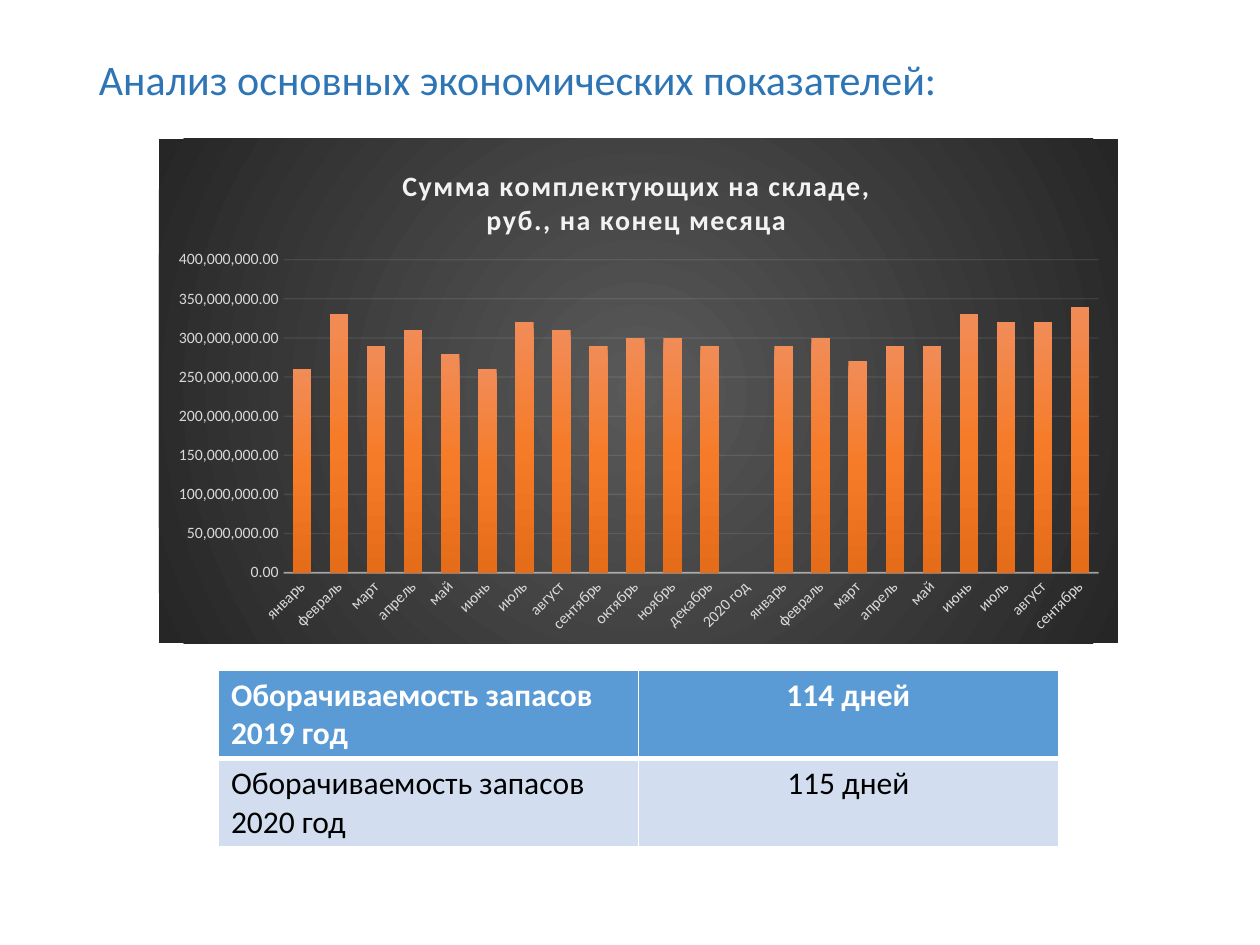
from lxml import etree
from pptx import Presentation
from pptx.chart.data import CategoryChartData
from pptx.dml.color import RGBColor
from pptx.enum import chart as ch, text as tx
from pptx.oxml import ns, parse_xml
from pptx.util import Pt

FONT = "Calibri"
COLORS = {
    "heading": "2E75B6", "header": "5B9BD5", "row": "D2DEEF",
    "white": "FFFFFF", "black": "000000", "label": "D9D9D9", "light": "F2F2F2",
    "back_in": "595959", "back_out": "262626",
    "bar_top": "F18C57", "bar_mid": "F67B28", "bar_base": "E56C19",
}
MONTHS = ["январь", "февраль", "март", "апрель", "май", "июнь", "июль",
          "август", "сентябрь", "октябрь", "ноябрь", "декабрь"]
MILLIONS_2019 = [260, 330, 290, 310, 280, 260, 320, 310, 290, 300, 300, 290]
MILLIONS_2020 = [290, 300, 270, 290, 290, 330, 320, 320, 340]
TURNOVER = [("Оборачиваемость запасов 2019 год", "114 дней"),
            ("Оборачиваемость запасов 2020 год", "115 дней")]


def rgb(name):
    """Return the named colour."""
    return RGBColor.from_string(COLORS[name])


def set_font(font, size, color, bold=False):
    """Format a font."""
    font.name, font.size, font.bold = FONT, Pt(size), bold
    font.color.rgb = rgb(color)


def add_text(p, content, size=18, color="black", bold=False, align=None, spacing=None):
    """Add a formatted run to a paragraph."""
    p.alignment = align
    r = p.add_run()
    r.text = content
    set_font(r.font, size, color, bold)
    if spacing:
        r.font._element.set("spc", str(spacing * 100))


def gradient(stops, shade):
    """Return a gradient fill element from (percent, colour) stops."""
    marks = "".join(f'<a:gs pos="{pos * 1000}"><a:srgbClr val="{COLORS[c]}"/></a:gs>'
                    for pos, c in stops)
    return parse_xml(f'<a:gradFill {ns.nsdecls("a")} rotWithShape="1">'
                     f'<a:gsLst>{marks}</a:gsLst>{shade}</a:gradFill>')


def manual_layout(x, y, w=None, h=None, inner=False):
    """Return a chart layout element with fractional position and size."""
    parts = [("layoutTarget", "inner")] if inner else []
    parts += [("xMode", "edge"), ("yMode", "edge")]
    parts += [(k, v) for k, v in zip("xywh", (x, y, w, h)) if v is not None]
    body = "".join(f'<c:{k} val="{v}"/>' for k, v in parts)
    return parse_xml(f'<c:layout {ns.nsdecls("c")}><c:manualLayout>{body}'
                     '</c:manualLayout></c:layout>')


def set_layout(parent, layout, index):
    """Replace the layout of a chart part."""
    for old in parent.findall(ns.qn("c:layout")):
        parent.remove(old)
    parent.insert(index, layout)


def set_line(line, color, width, opacity):
    """Format a partly transparent line."""
    line.color.rgb, line.width = rgb(color), Pt(width)
    clr = line._ln.find(".//" + ns.qn("a:srgbClr"))
    etree.SubElement(clr, ns.qn("a:alpha")).set("val", str(opacity * 1000))


def heading(s, x, y, w, h):
    """Place the slide heading."""
    tf = s.shapes.add_textbox(Pt(x), Pt(y), Pt(w), Pt(h)).text_frame
    tf.word_wrap, tf.vertical_anchor = True, tx.MSO_ANCHOR.MIDDLE
    p = tf.paragraphs[0]
    p.line_spacing = 0.9
    add_text(p, "Анализ основных экономических показателей:", size=24, color="heading")


def chart_title(chart):
    """Write the two-line chart title."""
    tf = chart.chart_title.text_frame
    lines = ["Сумма комплектующих на складе,", "руб., на конец месяца"]
    for i, line in enumerate(lines):
        p = tf.add_paragraph() if i else tf.paragraphs[0]
        add_text(p, line, size=16, color="light", bold=True, spacing=1)
    chart.chart_title.include_in_layout = False
    set_layout(chart.chart_title._element, manual_layout(0.25, 0.05), 1)


def chart_axes(chart):
    """Format both axes and the grid."""
    cat, val = chart.category_axis, chart.value_axis
    for axis in (cat, val):
        axis.major_tick_mark = axis.minor_tick_mark = ch.XL_TICK_MARK.NONE
        set_font(axis.tick_labels.font, 9, "label")
    cat._element.find(".//" + ns.qn("a:bodyPr")).set("rot", "-2700000")
    set_line(cat.format.line, "light", 1, 54)
    val.minimum_scale, val.maximum_scale, val.major_unit = 0, 400e6, 50e6
    val.tick_labels.number_format = "#,##0.00"
    val.tick_labels.number_format_is_linked = False
    val.format.line.fill.background()
    set_line(val.major_gridlines.format.line, "light", 0.75, 10)


def stock_chart(s, x, y, w, h):
    """Place the column chart of monthly stock."""
    data = CategoryChartData(number_format="#,##0.00")
    data.categories = MONTHS + ["2020 год"] + MONTHS[:len(MILLIONS_2020)]
    data.add_series("Series 1", [v and v * 1_000_000
                                 for v in MILLIONS_2019 + [None] + MILLIONS_2020])
    chart = s.shapes.add_chart(ch.XL_CHART_TYPE.COLUMN_CLUSTERED,
                               Pt(x), Pt(y), Pt(w), Pt(h), data).chart
    set_font(chart.font, 10, "black")
    chart.has_legend = False
    chart_title(chart)
    chart_axes(chart)
    plot = chart.plots[0]
    plot.gap_width, plot.overlap, plot.vary_by_categories = 100, -24, False
    area = chart._chartSpace.chart.plotArea
    set_layout(area, manual_layout(0.13, 0.24, 0.85, 0.62, inner=True), 0)
    bars = plot.series[0]
    bars.invert_if_negative = False
    bars.format.line.fill.background()
    bars._element.get_or_add_spPr().insert(0, gradient(
        [(0, "bar_top"), (50, "bar_mid"), (100, "bar_base")], '<a:lin ang="5400000" scaled="0"/>'))
    back = parse_xml(f'<c:spPr {ns.nsdecls("c", "a")}><a:ln><a:noFill/></a:ln></c:spPr>')
    back.insert(0, gradient(
        [(0, "back_in"), (100, "back_out")],
        '<a:path path="circle"><a:fillToRect l="50000" t="50000" r="50000" b="50000"/></a:path>'))
    chart._chartSpace.chart.addnext(back)


def set_borders(cell, bottom):
    """Draw white borders around a table cell."""
    widths = [("L", 1), ("R", 1), ("T", 1), ("B", bottom)]
    for i, (side, width) in enumerate(widths):
        cell._tc.get_or_add_tcPr().insert(i, parse_xml(
            f'<a:ln{side} {ns.nsdecls("a")} w="{Pt(width)}"><a:solidFill>'
            f'<a:srgbClr val="{COLORS["white"]}"/></a:solidFill></a:ln{side}>'))


def turnover_table(s, x, y, w, h):
    """Place the stock turnover table."""
    table = s.shapes.add_table(len(TURNOVER), 2, Pt(x), Pt(y), Pt(w), Pt(h)).table
    for i, row in enumerate(TURNOVER):
        head = i == 0
        for j, content in enumerate(row):
            cell = table.cell(i, j)
            cell.fill.solid()
            cell.fill.fore_color.rgb = rgb("header" if head else "row")
            set_borders(cell, bottom=3 if head else 1)
            add_text(cell.text_frame.paragraphs[0], content, bold=head,
                     color="white" if head else "black",
                     align=tx.PP_ALIGN.CENTER if j else None)


def main():
    """Build the slide."""
    prs = Presentation()
    prs.slide_width, prs.slide_height = Pt(720), Pt(540)
    s = prs.slides.add_slide(prs.slide_layouts[6])
    heading(s, 49.5, 29, 621, 35)
    turnover_table(s, 124.8, 383, 480, 101)
    stock_chart(s, 90.8, 79.2, 548, 288.5)
    prs.save("out.pptx")


if __name__ == "__main__":
    main()
